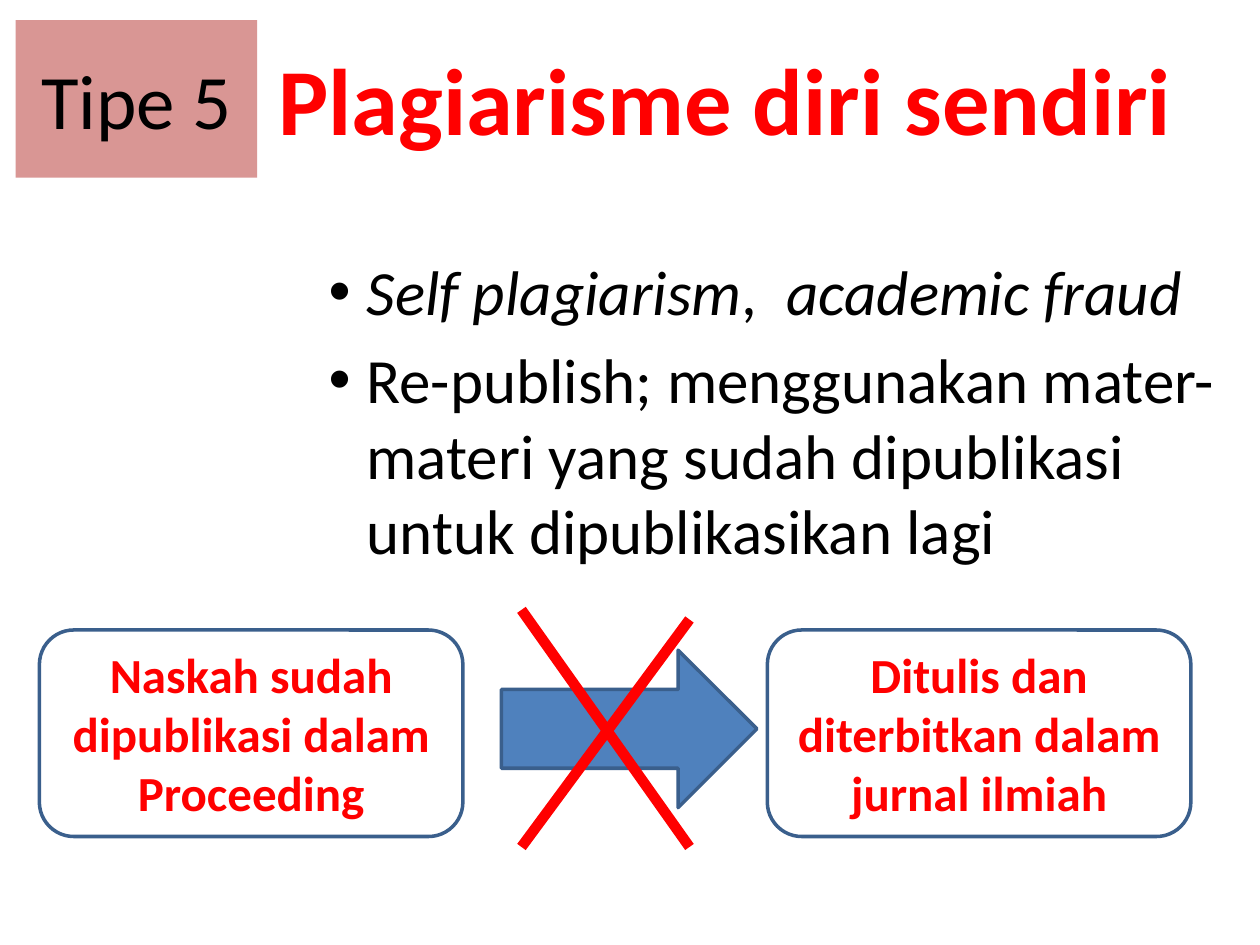
from dataclasses import dataclass

import pptx
import pptx.dml.color
import pptx.enum.shapes
import pptx.enum.text
import pptx.oxml.ns
import pptx.util
from lxml import etree

Pt = pptx.util.Pt
Kind = pptx.enum.shapes.MSO_SHAPE
Align = pptx.enum.text.PP_ALIGN
Anchor = pptx.enum.text.MSO_ANCHOR


@dataclass(frozen=True)
class Theme:
    font: str = "Calibri"
    black: str = "000000"
    red: str = "FF0000"
    white: str = "FFFFFF"
    pink: str = "D99694"
    blue: str = "4F81BD"
    edge: str = "3A5F8C"
    title: int = 54
    tag: int = 44
    body: int = 36
    note: int = 28


@dataclass(frozen=True)
class Box:
    kind: int
    left: float
    top: float
    width: float
    height: float
    fill: str
    edge: str = ""
    text: str = ""
    size: int = 0
    color: str = ""
    bold: bool = False


@dataclass(frozen=True)
class Stroke:
    x1: float
    y1: float
    x2: float
    y2: float


THEME = Theme()


def rgb(code: str):
    return pptx.dml.color.RGBColor.from_string(code)


def write(para, text: str, *, size: float, color: str = THEME.black,
          bold: bool = False, italic: bool = False) -> None:
    run = para.add_run()
    run.text = text
    font = run.font
    font.name, font.size = THEME.font, Pt(size)
    font.bold, font.italic = bold, italic
    font.color.rgb = rgb(color)


def bullet(para) -> None:
    props = para._p.get_or_add_pPr()
    props.set("marL", str(Pt(50.4)))
    props.set("indent", str(-Pt(21.6)))
    qn = pptx.oxml.ns.qn
    etree.SubElement(props, qn("a:buFont")).set("typeface", "Arial")
    etree.SubElement(props, qn("a:buChar")).set("char", "•")


def draw(slide, box: Box) -> None:
    shape = slide.shapes.add_shape(
        box.kind, Pt(box.left), Pt(box.top), Pt(box.width), Pt(box.height))
    shape.shadow.inherit = False
    shape.fill.solid()
    shape.fill.fore_color.rgb = rgb(box.fill)
    if box.edge:
        shape.line.color.rgb = rgb(box.edge)
        shape.line.width = Pt(2)
    else:
        shape.line.fill.background()
    if box.text:
        frame = shape.text_frame
        frame.word_wrap = True
        frame.vertical_anchor = Anchor.MIDDLE
        para = frame.paragraphs[0]
        para.alignment = Align.CENTER
        write(para, box.text, size=box.size, color=box.color, bold=box.bold)


def strike(slide, mark: Stroke) -> None:
    line = slide.shapes.add_connector(
        pptx.enum.shapes.MSO_CONNECTOR.STRAIGHT,
        Pt(mark.x1), Pt(mark.y1), Pt(mark.x2), Pt(mark.y2))
    line.line.color.rgb = rgb(THEME.red)
    line.line.width = Pt(6)
    etree.SubElement(line._element.spPr, pptx.oxml.ns.qn("a:effectLst"))


def content(slide) -> None:
    """Add the heading and its two bullet points."""
    frame = slide.shapes.add_textbox(
        Pt(152), Pt(20), Pt(568), Pt(302)).text_frame
    frame.word_wrap = True
    write(frame.paragraphs[0], "Plagiarisme diri sendiri",
          size=THEME.title, color=THEME.red, bold=True)
    points = (
        (56, (("Self plagiarism", True), (",  ", False),
              ("academic fraud", True))),
        (7, (("Re-publish; menggunakan mater-materi yang sudah "
              "dipublikasi untuk dipublikasikan lagi", False),)),
    )
    for gap, parts in points:
        para = frame.add_paragraph()
        para.space_before = Pt(gap)
        bullet(para)
        for text, italic in parts:
            write(para, text, size=THEME.body, italic=italic)


def card(left: float, text: str) -> Box:
    return Box(Kind.ROUNDED_RECTANGLE, left, 360, 242, 118, THEME.white,
               THEME.edge, text, THEME.note, THEME.red, True)


def main() -> None:
    deck = pptx.Presentation()
    deck.slide_width, deck.slide_height = Pt(720), Pt(540)
    slide = deck.slides.add_slide(deck.slide_layouts[6])
    content(slide)
    boxes = (
        Box(Kind.RECTANGLE, 9, 11.5, 138, 90, THEME.pink,
            text="Tipe 5", size=THEME.tag, color=THEME.black),
        card(22.5, "Naskah sudah dipublikasi dalam Proceeding"),
        Box(Kind.RIGHT_ARROW, 286.5, 371.5, 146, 90, THEME.blue, THEME.edge),
        card(438.5, "Ditulis dan diterbitkan dalam jurnal ilmiah"),
    )
    for box in boxes:
        draw(slide, box)
    for mark in (Stroke(298, 348.5, 394, 484), Stroke(394, 354, 298, 484)):
        strike(slide, mark)
    deck.save("out.pptx")


if __name__ == "__main__":
    main()
